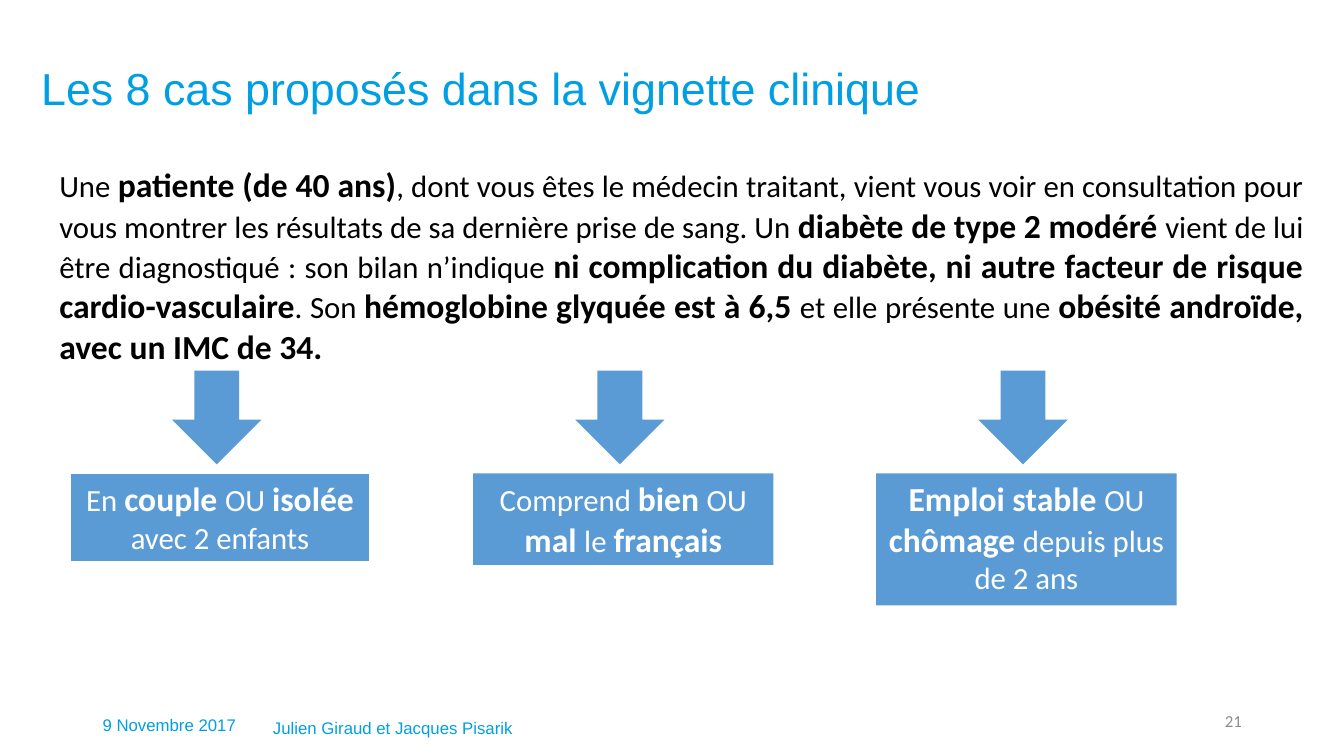
from dataclasses import dataclass

from pptx import Presentation
from pptx.dml.color import RGBColor
from pptx.enum.shapes import MSO_SHAPE
from pptx.enum.text import MSO_ANCHOR, PP_ALIGN
from pptx.util import Pt


@dataclass(frozen=True)
class Theme:
    """Colours, fonts and type sizes of the slide."""
    accent: RGBColor = RGBColor(0x00, 0x9F, 0xE3)
    block: RGBColor = RGBColor(0x5B, 0x9B, 0xD5)
    ink: RGBColor = RGBColor(0, 0, 0)
    paper: RGBColor = RGBColor(0xFF, 0xFF, 0xFF)
    muted: RGBColor = RGBColor(0x8C, 0x8C, 0x8C)
    heading_font: str = "Arial"
    body_font: str = "Calibri"
    title_size: int = 32
    strong_size: int = 24
    body_size: int = 22
    small_size: int = 12


THEME = Theme()

CASE_TEXT = (
    "Une *patiente (de 40 ans)*, dont vous êtes le médecin traitant, vient vous voir "
    "en consultation pour vous montrer les résultats de sa dernière prise de sang. "
    "Un *diabète de type 2 modéré *vient de lui être diagnostiqué : son bilan "
    "n’indique *ni complication du diabète, ni autre facteur de risque "
    "cardio-vasculaire*. Son *hémoglobine glyquée est à 6,5 *et elle présente une "
    "*obésité androïde, avec un IMC de 34.*"
)

VARIANTS = [
    (["En *couple *OU *isolée*", "avec 2 enfants"], 63.4, 1.5),
    (["Comprend *bien *OU *mal *le *français*"], 65.5, 0),
    (["*Emploi stable *OU *chômage *depuis plus de 2 ans"], 94.3, 0),
]


def style_run(run, font_name, size, color, bold=False):
    """Apply typeface, size, colour and weight to a run."""
    run.font.name = font_name
    run.font.size = Pt(size)
    run.font.color.rgb = color
    run.font.bold = bold


def write_marked(paragraph, marked, color, align):
    """Write text whose parts between asterisks are strong."""
    paragraph.alignment = align
    for index, words in enumerate(marked.split("*")):
        if words:
            strong = index % 2 == 1
            run = paragraph.add_run()
            run.text = words
            size = THEME.strong_size if strong else THEME.body_size
            style_run(run, THEME.body_font, size, color, strong)


def add_label(slide, box, words, font_name, size, color, align=PP_ALIGN.LEFT, spacing=0.9):
    """Add one vertically centred line of text in the given box."""
    frame = slide.shapes.add_textbox(*map(Pt, box)).text_frame
    frame.word_wrap = True
    frame.vertical_anchor = MSO_ANCHOR.MIDDLE
    frame.text = words
    line = frame.paragraphs[0]
    line.alignment = align
    line.line_spacing = spacing
    style_run(line.runs[0], font_name, size, color)


def add_case(slide, box):
    """Add the justified clinical case."""
    frame = slide.shapes.add_textbox(*map(Pt, box)).text_frame
    frame.word_wrap = True
    write_marked(frame.paragraphs[0], CASE_TEXT, THEME.ink, PP_ALIGN.JUSTIFY)


def add_block(slide, preset, box):
    """Add a flat filled shape without outline."""
    block = slide.shapes.add_shape(preset, *map(Pt, box))
    block.shadow.inherit = False
    block.fill.solid()
    block.fill.fore_color.rgb = THEME.block
    block.line.fill.background()
    return block


def add_variant(slide, box, lines, outline):
    """Add a down arrow at the top of the box and its alternative below."""
    left, top, width, height = box
    arrow_width, arrow_height, drop = 64, 67, 73.4
    arrow_left = left + (width - arrow_width) / 2 - 2.4
    add_block(slide, MSO_SHAPE.DOWN_ARROW, (arrow_left, top, arrow_width, arrow_height))
    choice = add_block(slide, MSO_SHAPE.RECTANGLE, (left, top + drop, width, height - drop))
    if outline:
        choice.line.color.rgb = THEME.paper
        choice.line.width = Pt(outline)
    frame = choice.text_frame
    frame.word_wrap = True
    frame.vertical_anchor = MSO_ANCHOR.TOP
    for index, marked in enumerate(lines):
        paragraph = frame.add_paragraph() if index else frame.paragraphs[0]
        write_marked(paragraph, marked, THEME.paper, PP_ALIGN.CENTER)


def add_variants(slide, box):
    """Spread the variants in equal columns over the box."""
    left, top, width, _ = box
    choice_width, drop = 214.6, 73.4
    step = (width - choice_width) / (len(VARIANTS) - 1)
    for column, (lines, height, outline) in enumerate(VARIANTS):
        column_box = (left + column * step, top, choice_width, drop + height)
        add_variant(slide, column_box, lines, outline)


def add_footer(slide, box):
    """Add date, authors and slide number."""
    left, top, width, _ = box
    small = THEME.small_size
    add_label(slide, (left, top + 4.3, 113.8, 27.4), "9 Novembre 2017",
              THEME.heading_font, small, THEME.accent)
    add_label(slide, (left + 121.7, top + 6.5, 190, 27.4), "Julien Giraud et Jacques Pisarik",
              THEME.heading_font, small, THEME.accent)
    add_label(slide, (left + width - 216, top, 216, 28.8), "21",
              THEME.body_font, small, THEME.muted, PP_ALIGN.RIGHT, 1.0)


def main():
    """Build and save the slide."""
    deck = Presentation()
    deck.slide_width, deck.slide_height = Pt(960), Pt(540)
    slide = deck.slides.add_slide(deck.slide_layouts[6])
    add_label(slide, (22.3, 13, 931, 104.4), "Les 8 cas proposés dans la vignette clinique",
              THEME.heading_font, THEME.title_size, THEME.accent)
    add_case(slide, (35.3, 113.8, 902.9, 152.6))
    add_variants(slide, (49.9, 264.7, 790.6, 168))
    add_footer(slide, (66.2, 500.4, 828, 34))
    deck.save("out.pptx")


if __name__ == "__main__":
    main()
